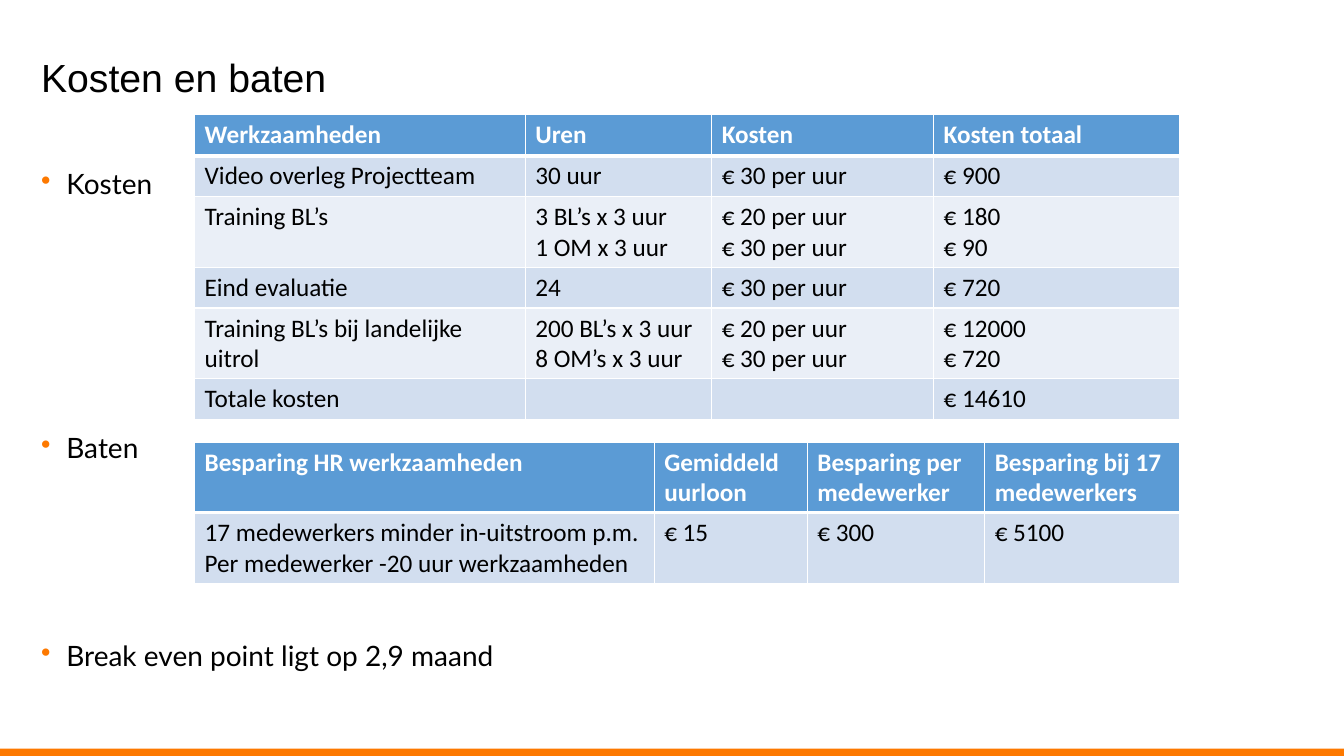
from dataclasses import dataclass

from lxml import etree
from pptx import Presentation
from pptx.dml.color import RGBColor
from pptx.enum.shapes import MSO_SHAPE
from pptx.enum.text import MSO_ANCHOR
from pptx.oxml.ns import qn
from pptx.slide import Slide
from pptx.table import _Cell
from pptx.text.text import TextFrame, _Paragraph
from pptx.util import Pt

RECTANGLE = MSO_SHAPE.RECTANGLE
MIDDLE = MSO_ANCHOR.MIDDLE
TOP = MSO_ANCHOR.TOP

COLORS = {
    "accent": "FD7900",
    "text": "000000",
    "white": "FFFFFF",
    "header": "5B9BD5",
    "odd_row": "D2DEEF",
    "even_row": "EAEFF7",
}
SLIDE_WIDTH, SLIDE_HEIGHT = 960, 540
TEXT_LEFT = 22.3
TABLE_LEFT = 139
SINGLE_ROW, DOUBLE_ROW = 29.2, 50.4
THIN, THICK = 1, 3
BULLET_INDENT = 18


@dataclass
class Topic:
    text: str
    space_before: float


@dataclass
class CostTable:
    top: float
    widths: list[float]
    heights: list[float]
    rows: list[list[str]]


TOPICS = [
    Topic("Kosten", 0),
    Topic("Baten", 167.3),
    Topic("Break even point ligt op 2,9 maand", 126.6),
]

TABLES = [
    CostTable(
        top=82,
        widths=[236.2, 133.2, 158.5, 176],
        heights=[SINGLE_ROW, SINGLE_ROW, DOUBLE_ROW, SINGLE_ROW, DOUBLE_ROW, SINGLE_ROW],
        rows=[
            ["Werkzaamheden", "Uren", "Kosten", "Kosten totaal"],
            ["Video overleg Projectteam", "30 uur", "€ 30 per uur", "€ 900"],
            ["Training BL’s", "3 BL’s x 3 uur\n1 OM x 3 uur",
             "€ 20 per uur\n€ 30 per uur", "€ 180\n€ 90"],
            ["Eind evaluatie", "24", "€ 30 per uur", "€ 720"],
            ["Training BL’s bij landelijke uitrol", "200 BL’s x 3 uur\n8 OM’s x 3 uur",
             "€ 20 per uur\n€ 30 per uur", "€ 12000\n€ 720"],
            ["Totale kosten", "", "", "€ 14610"],
        ],
    ),
    CostTable(
        top=315.7,
        widths=[328.3, 109.4, 126.7, 139.5],
        heights=[DOUBLE_ROW, DOUBLE_ROW],
        rows=[
            ["Besparing HR werkzaamheden", "Gemiddeld uurloon",
             "Besparing per medewerker", "Besparing bij 17 medewerkers"],
            ["17 medewerkers minder in-uitstroom p.m.\nPer medewerker -20 uur werkzaamheden",
             "€ 15", "€ 300", "€ 5100"],
        ],
    ),
]


def rgb(name: str) -> RGBColor:
    return RGBColor.from_string(COLORS[name])


def add_run(paragraph: _Paragraph, text: str, font: str, size: float,
            color: str = "text", bold: bool = False) -> None:
    run = paragraph.add_run()
    run.text = text
    run.font.name = font
    run.font.size = Pt(size)
    run.font.bold = bold
    run.font.color.rgb = rgb(color)


def add_text_frame(slide: Slide, top: float, width: float, height: float,
                   anchor: MSO_ANCHOR) -> TextFrame:
    box = slide.shapes.add_textbox(Pt(TEXT_LEFT), Pt(top), Pt(width), Pt(height))
    frame = box.text_frame
    frame.word_wrap = True
    frame.vertical_anchor = anchor
    return frame


def add_solid_color(parent: etree._Element, tag: str, color: str) -> None:
    fill = etree.SubElement(parent, qn(tag))
    etree.SubElement(fill, qn("a:srgbClr"), val=COLORS[color])


def set_bullet(paragraph: _Paragraph) -> None:
    properties = paragraph._p.get_or_add_pPr()
    properties.set("marL", str(Pt(BULLET_INDENT)))
    properties.set("indent", str(-Pt(BULLET_INDENT)))
    add_solid_color(properties, "a:buClr", "accent")
    etree.SubElement(properties, qn("a:buChar"), char="•")


def set_borders(cell: _Cell, row: int) -> None:
    properties = cell._tc.get_or_add_tcPr()
    widths = {
        "a:lnL": THIN,
        "a:lnR": THIN,
        "a:lnT": THICK if row == 1 else THIN,
        "a:lnB": THICK if row == 0 else THIN,
    }
    for side, width in widths.items():
        line = etree.SubElement(properties, qn(side), w=str(Pt(width)))
        add_solid_color(line, "a:solidFill", "white")


def fill_cell(cell: _Cell, text: str, row: int) -> None:
    is_header = row == 0
    set_borders(cell, row)
    cell.fill.solid()
    cell.fill.fore_color.rgb = rgb(
        "header" if is_header else "odd_row" if row % 2 else "even_row")
    paragraph = cell.text_frame.paragraphs[0]
    if not text:
        paragraph.font.size = Pt(18)
        return
    for number, line in enumerate(text.split("\n")):
        if number:
            paragraph.add_line_break()
        add_run(paragraph, line, "Calibri", 18, "white" if is_header else "text", is_header)


def add_cost_table(slide: Slide, content: CostTable) -> None:
    table = slide.shapes.add_table(
        len(content.rows), len(content.widths), Pt(TABLE_LEFT), Pt(content.top),
        Pt(sum(content.widths)), Pt(sum(content.heights))).table
    for column, width in zip(table.columns, content.widths):
        column.width = Pt(width)
    for row, (height, texts) in enumerate(zip(content.heights, content.rows)):
        table.rows[row].height = Pt(height)
        for column, text in enumerate(texts):
            fill_cell(table.cell(row, column), text, row)


def main() -> None:
    deck = Presentation()
    deck.slide_width, deck.slide_height = Pt(SLIDE_WIDTH), Pt(SLIDE_HEIGHT)
    slide = deck.slides.add_slide(deck.slide_layouts[6])

    # Footer bar
    footer = slide.shapes.add_shape(RECTANGLE, 0, Pt(534.7), Pt(SLIDE_WIDTH), Pt(5.3))
    footer.shadow.inherit = False
    footer.fill.solid()
    footer.fill.fore_color.rgb = rgb("accent")
    footer.line.fill.background()

    # Title
    title = add_text_frame(slide, 13, 812, 88, MIDDLE).paragraphs[0]
    title.line_spacing = 0.9
    add_run(title, "Kosten en baten", "Arial", 28)

    # Topics beside and below the tables
    topics = add_text_frame(slide, 118, 909.4, 366.5, TOP)
    for number, topic in enumerate(TOPICS):
        paragraph = topics.add_paragraph() if number else topics.paragraphs[0]
        set_bullet(paragraph)
        paragraph.line_spacing = 0.9
        paragraph.space_before = Pt(topic.space_before)
        add_run(paragraph, topic.text, "Lato", 20)

    # Costs and benefits
    for content in TABLES:
        add_cost_table(slide, content)

    deck.save("out.pptx")


if __name__ == "__main__":
    main()
